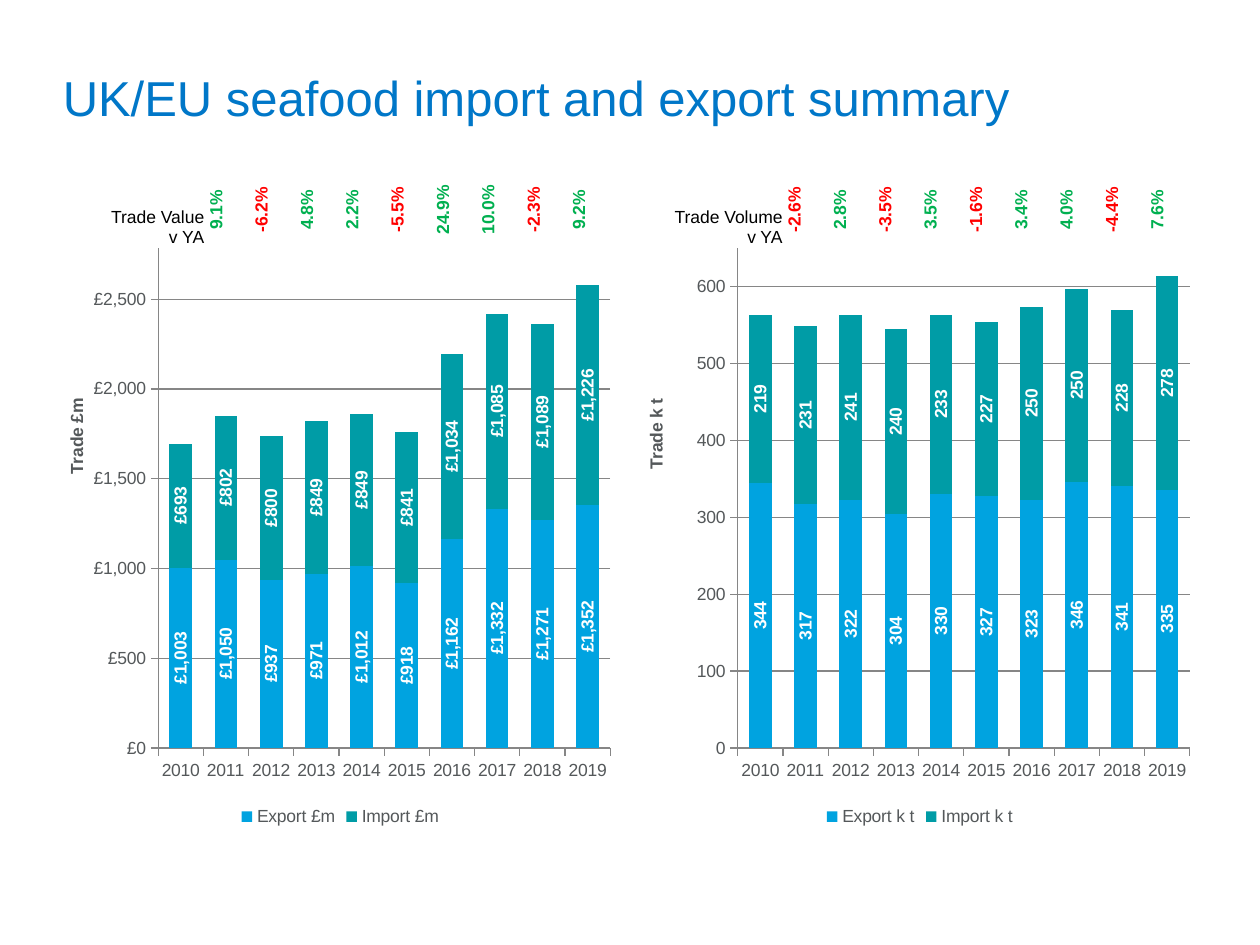
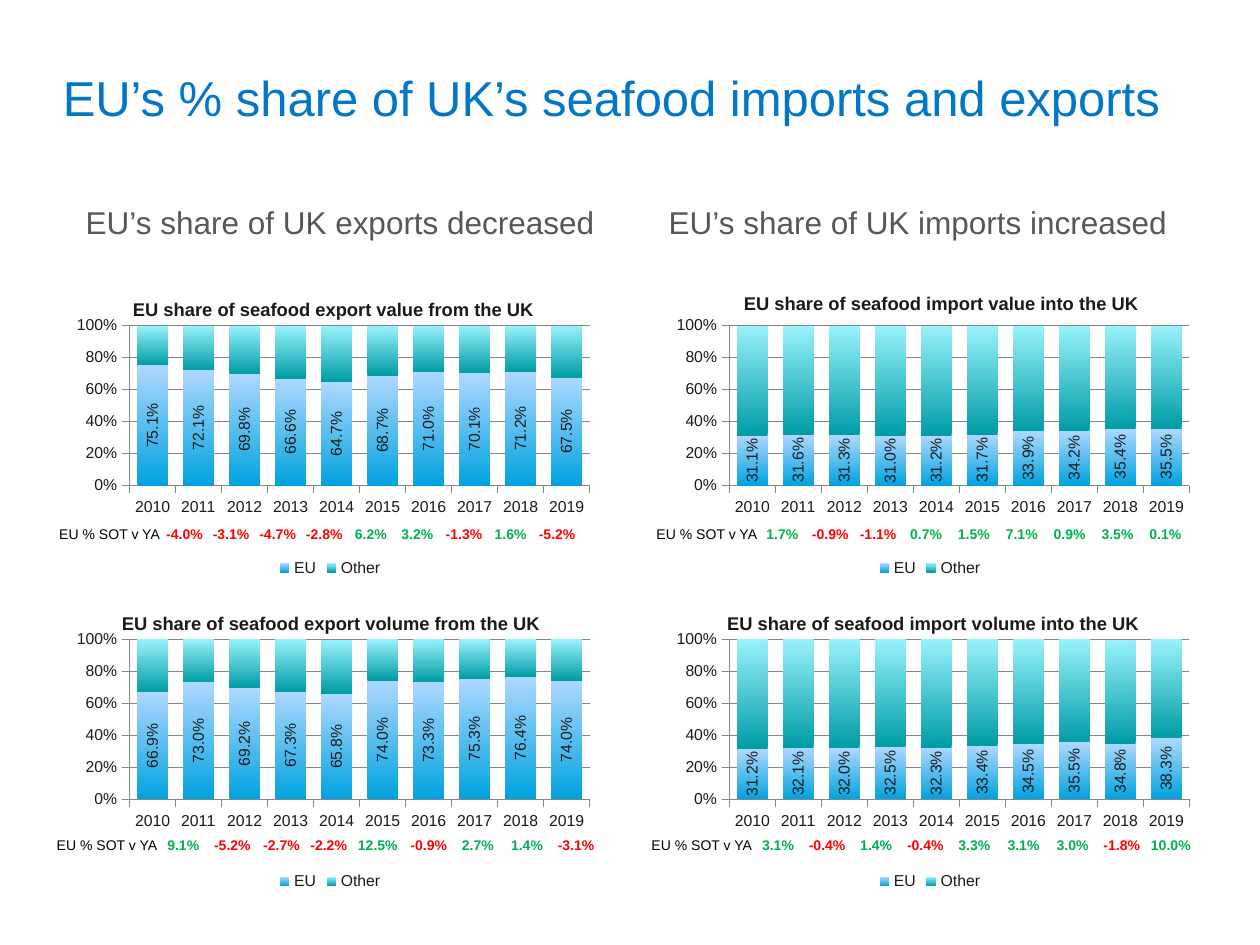
import pptx
import pptx.util
import pptx.oxml
import pptx.oxml.ns
import pptx.chart.data
import pptx.enum.chart
import pptx.enum.text
import pptx.dml.color

Inches = pptx.util.Inches
Pt = pptx.util.Pt
RGBColor = pptx.dml.color.RGBColor
PP_ALIGN = pptx.enum.text.PP_ALIGN
MSO_ANCHOR = pptx.enum.text.MSO_ANCHOR
qn = pptx.oxml.ns.qn

FONT = "Arial"
TITLE_BLUE = RGBColor(0x00, 0x77, 0xC8)
GREY = RGBColor(0x54, 0x58, 0x5A)
INK = RGBColor(0x1A, 0x1A, 0x1A)
BLACK = RGBColor(0, 0, 0)
WHITE = RGBColor(0xFF, 0xFF, 0xFF)
GREEN = RGBColor(0x00, 0xB0, 0x50)
RED = RGBColor(0xFF, 0, 0)
LINE = RGBColor(0x86, 0x86, 0x86)
SERIES = [RGBColor(0x00, 0xA3, 0xE0), RGBColor(0x00, 0x9C, 0xA6)]
SERIES_LIGHT = [RGBColor(0xAE, 0xD8, 0xFF), RGBColor(0x98, 0xF2, 0xFC)]
YEARS = [str(year) for year in range(2010, 2020)]


def add_text(s, text, left, top, width, height, size, color, align, anchor):
    tf = s.shapes.add_textbox(Inches(left), Inches(top), Inches(width), Inches(height)).text_frame
    tf.word_wrap = True
    tf.vertical_anchor = anchor
    p = tf.paragraphs[0]
    p.text = text
    p.alignment = align
    p.font.name = FONT
    p.font.size = Pt(size)
    p.font.color.rgb = color


def set_layout(parent, index, **places):
    for old in parent.findall(qn("c:layout")):
        parent.remove(old)
    target = '<c:layoutTarget val="inner"/>' if "w" in places else ""
    modes = "".join(f'<c:{k}Mode val="edge"/>' for k in places if k in "xy")
    values = "".join(f'<c:{k} val="{v}"/>' for k, v in places.items())
    parent.insert(index, pptx.oxml.parse_xml(
        f'<c:layout {pptx.oxml.ns.nsdecls("c")}><c:manualLayout>'
        f'{target}{modes}{values}</c:manualLayout></c:layout>'))


prs = pptx.Presentation()
prs.slide_width = Inches(10)
prs.slide_height = Inches(7.5)

slides = []
for title in ["UK/EU seafood import and export summary",
              "EU’s % share of UK’s seafood imports and exports"]:
    s = prs.slides.add_slide(prs.slide_layouts[6])
    add_text(s, title, 0.4, 0.3, 9.17, 0.94, 28, TITLE_BLUE, PP_ALIGN.LEFT, MSO_ANCHOR.MIDDLE)
    slides.append(s)
summary, share = slides

trade_charts = [
    (0.4, "Trade £m", '"£"#,##0', 3000, 500, {
        "Export £m": [1003, 1050, 937, 971, 1012, 918, 1162, 1332, 1271, 1352],
        "Import £m": [693, 802, 800, 849, 849, 841, 1034, 1085, 1089, 1226]}),
    (5, "Trade k t", "#,##0", 700, 100, {
        "Export k t": [344, 317, 322, 304, 330, 327, 323, 346, 341, 335],
        "Import k t": [219, 231, 241, 240, 233, 227, 250, 250, 228, 278]}),
]
share_charts = [
    (0.41, 2.19, "EU share of seafood export value from the UK", 0.14, 0.06,
     [0.751, 0.721, 0.698, 0.666, 0.647, 0.687, 0.71, 0.701, 0.712, 0.675],
     [0.25, 0.28, 0.3, 0.33, 0.35, 0.31, 0.29, 0.3, 0.29, 0.33]),
    (5.17, 2.19, "EU share of seafood import value into the UK", 0.16, 0.04,
     [0.311, 0.316, 0.313, 0.31, 0.312, 0.317, 0.339, 0.342, 0.354, 0.355],
     [0.69, 0.68, 0.69, 0.69, 0.69, 0.68, 0.66, 0.66, 0.65, 0.65]),
    (0.41, 4.68, "EU share of seafood export volume from the UK", 0.12, 0.06,
     [0.669, 0.73, 0.692, 0.673, 0.658, 0.74, 0.733, 0.753, 0.764, 0.74],
     [0.33, 0.27, 0.31, 0.33, 0.34, 0.26, 0.27, 0.25, 0.24, 0.26]),
    (5.17, 4.68, "EU share of seafood import volume into the UK", 0.13, 0.06,
     [0.312, 0.321, 0.32, 0.325, 0.323, 0.334, 0.345, 0.355, 0.348, 0.383],
     [0.69, 0.68, 0.68, 0.68, 0.68, 0.67, 0.66, 0.65, 0.65, 0.62]),
]

charts = []
for left, axis_title, fmt, top_value, step, series in trade_charts:
    charts.append(dict(
        slide=summary, box=(left, 1.51, 4.6, 5.09), size=10, color=GREY, axis_title=axis_title,
        title=None, fmt=fmt, label_fmt=fmt, max=top_value, step=step, gap=100, series=series,
        plot=dict(x=0.186, y=0.03, w=0.78, h=0.84)))
for left, top, title, title_x, title_y, eu, other in share_charts:
    charts.append(dict(
        slide=share, box=(left, top, 4.42, 2.43), size=9, color=INK, axis_title=None,
        title=title, title_at=dict(x=title_x, y=title_y), fmt="0%", label_fmt="0.0%",
        max=1, step=0.2, gap=50, series={"EU": eu, "Other": other},
        plot=dict(x=0.14, y=0.162, w=0.826, h=0.523)))

for c in charts:
    data = pptx.chart.data.CategoryChartData(number_format=c["label_fmt"])
    data.categories = YEARS
    for name, values in c["series"].items():
        data.add_series(name, values)
    chart = c["slide"].shapes.add_chart(
        pptx.enum.chart.XL_CHART_TYPE.COLUMN_STACKED, *map(Inches, c["box"]), data).chart
    chart.font.name = FONT
    chart.font.size = Pt(c["size"])
    chart.font.color.rgb = c["color"]
    chart.has_legend = True
    chart.legend.position = pptx.enum.chart.XL_LEGEND_POSITION.BOTTOM
    chart.legend.include_in_layout = False
    set_layout(chart.element.xpath(".//c:plotArea")[0], 0, **c["plot"])

    axis = chart.value_axis
    axis.minimum_scale = 0
    axis.maximum_scale = c["max"]
    axis.major_unit = c["step"]
    axis.tick_labels.number_format = c["fmt"]
    axis.tick_labels.number_format_is_linked = False
    for line in [axis.format.line, axis.major_gridlines.format.line, chart.category_axis.format.line]:
        line.color.rgb = LINE
        line.width = Pt(0.75)

    chart.has_title = bool(c["title"])
    headings = []
    if c["title"]:
        headings.append((chart.chart_title, c["title"], 10.5, c["title_at"], "0"))
    if c["axis_title"]:
        headings.append((axis.axis_title, c["axis_title"], 10, dict(x=0.02, y=0.32), "-5400000"))
    for heading, text, size, place, rotation in headings:
        p = heading.text_frame.paragraphs[0]
        p.text = text
        p.font.name = FONT
        p.font.size = Pt(size)
        p.font.bold = True
        p.font.color.rgb = c["color"]
        heading.element.xpath(".//a:bodyPr")[0].set("rot", rotation)
        set_layout(heading.element, 1, **place)
        if c["title"]:
            heading.element.find(qn("c:overlay")).set("val", "1")

    plot = chart.plots[0]
    plot.gap_width = c["gap"]
    plot.overlap = 100
    plot.vary_by_categories = False
    for i, ser in enumerate(plot.series):
        ser.invert_if_negative = False
        fill = ser.format.fill
        if c["slide"] is share:
            fill.gradient()
            fill.gradient_angle = 90
            fill.gradient_stops[0].color.rgb = SERIES[i]
            fill.gradient_stops[1].color.rgb = SERIES_LIGHT[i]
            if i == 1:
                continue
        else:
            fill.solid()
            fill.fore_color.rgb = SERIES[i]
        labels = ser.data_labels
        labels.show_value = True
        labels.number_format = c["label_fmt"]
        labels.number_format_is_linked = False
        labels.position = pptx.enum.chart.XL_LABEL_POSITION.CENTER
        labels.font.name = FONT
        labels.font.size = Pt(c["size"])
        labels.font.bold = c["slide"] is summary
        labels.font.color.rgb = WHITE if c["slide"] is summary else INK
    for body in chart.element.xpath(".//c:dLbls//a:bodyPr"):
        body.set("rot", "-5400000")
        body.set("vert", "horz")

SOT = "EU % SOT v YA"
tables = [
    (summary, 0.49, 1.37, 0.59, [1.14] + [0.36] * 9, "Trade Value\nv YA",
     "9.1% -6.2% 4.8% 2.2% -5.5% 24.9% 10.0% -2.3% 9.2%"),
    (summary, 5.08, 1.37, 0.59, [1.14] + [0.36] * 9, "Trade Volume\nv YA",
     "-2.6% 2.8% -3.5% 3.5% -1.6% 3.4% 4.0% -4.4% 7.6%"),
    (share, 0, 4.13, 0.21, [1.28] + [0.37] * 9, SOT,
     "-4.0% -3.1% -4.7% -2.8% 6.2% 3.2% -1.3% 1.6% -5.2%"),
    (share, 0, 6.61, 0.19, [1.26] + [0.39] * 3 + [0.36, 0.42] + [0.39] * 4, SOT,
     "9.1% -5.2% -2.7% -2.2% 12.5% -0.9% 2.7% 1.4% -3.1%"),
    (share, 4.73, 6.61, 0.19, [1.25] + [0.39] * 9, SOT,
     "3.1% -0.4% 1.4% -0.4% 3.3% 3.1% 3.0% -1.8% 10.0%"),
    (share, 4.72, 4.13, 0.21, [1.3] + [0.38] * 9, SOT,
     "1.7% -0.9% -1.1% 0.7% 1.5% 7.1% 0.9% 3.5% 0.1%"),
]
for s, left, top, height, widths, label, changes in tables:
    table = s.shapes.add_table(1, len(widths), Inches(left), Inches(top),
                               Inches(sum(widths)), Inches(height)).table
    table.first_row = False
    table.horz_banding = False
    for i, text in enumerate([label] + changes.split()):
        table.columns[i].width = Inches(widths[i])
        cell = table.cell(0, i)
        cell.margin_left = cell.margin_right = cell.margin_top = Inches(0.01)
        cell.margin_bottom = 0
        cell.vertical_anchor = MSO_ANCHOR.MIDDLE
        if s is summary:
            cell.fill.solid()
            cell.fill.fore_color.rgb = WHITE
            if i == 0:
                cell.vertical_anchor = MSO_ANCHOR.BOTTOM
            else:
                cell._tc.get_or_add_tcPr().set("vert", "vert270")
        else:
            cell.fill.background()
        cell.text_frame.text = text
        for p in cell.text_frame.paragraphs:
            p.alignment = PP_ALIGN.CENTER if i else PP_ALIGN.RIGHT
            p.font.name = FONT
            p.font.size = Pt(10 if s is summary else 8)
            p.font.bold = i > 0
            p.font.color.rgb = BLACK if i == 0 else RED if text.startswith("-") else GREEN

for left, width, text in [(0.4, 4.6, "EU’s share of UK exports decreased"),
                          (5, 4.57, "EU’s share of UK imports increased")]:
    add_text(share, text, left, 1.56, width, 0.4, 18, GREY, PP_ALIGN.CENTER, MSO_ANCHOR.TOP)

prs.save("out.pptx")
